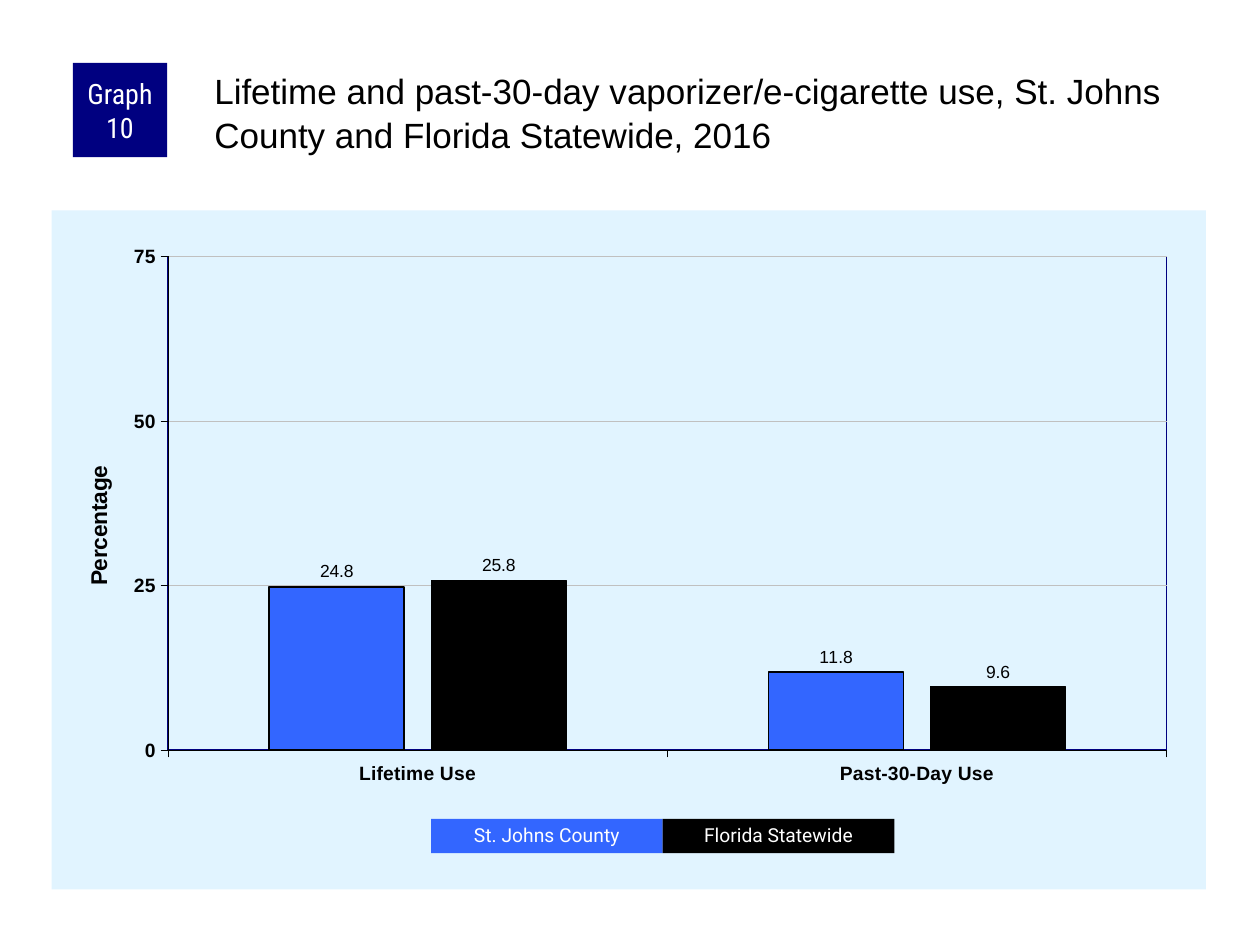
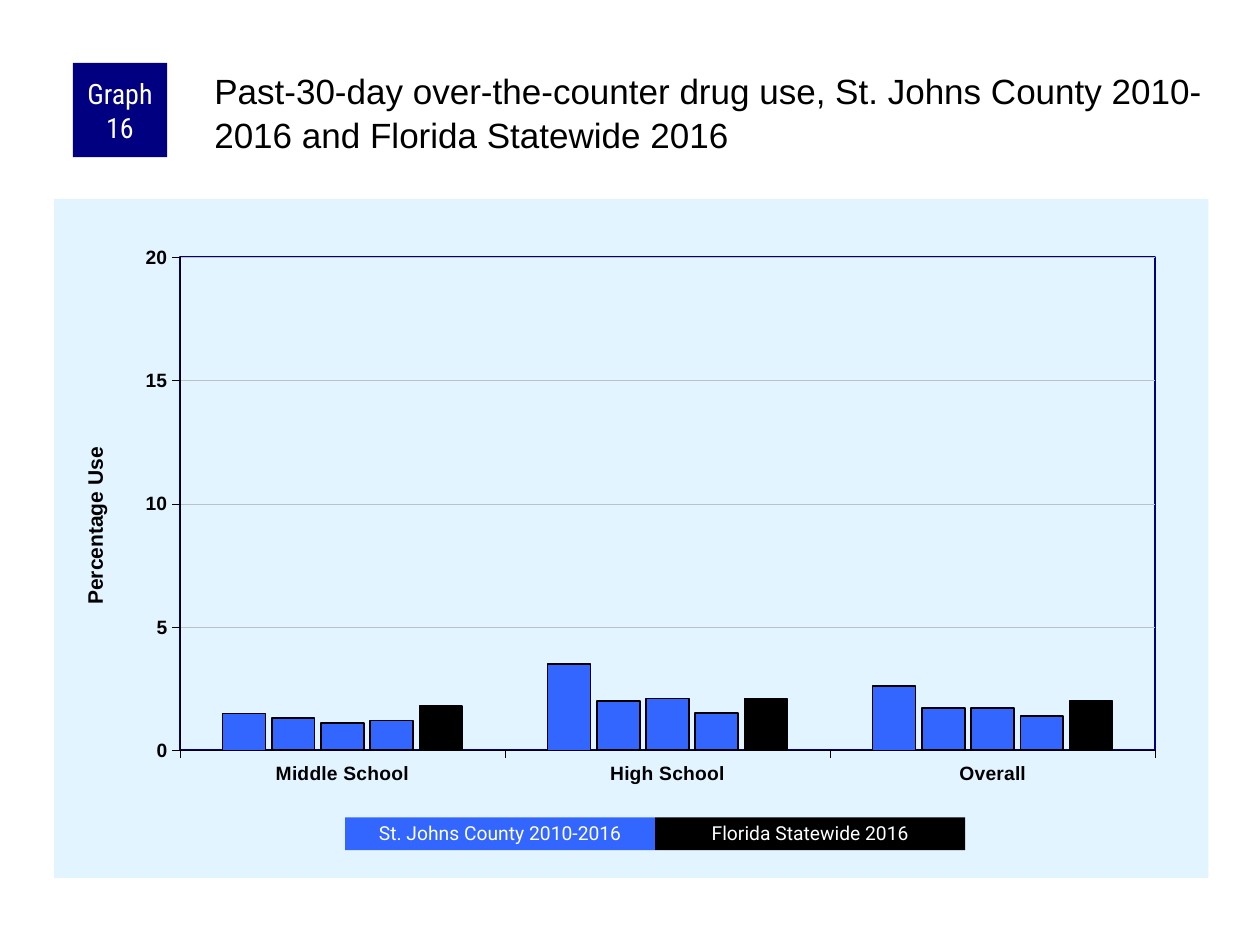
"""Build two survey slides, each with a numbered badge, a title, a column chart and a colour key."""
from lxml import etree
from pptx import Presentation
from pptx import util as u
from pptx.chart.data import CategoryChartData
from pptx.dml.color import RGBColor
from pptx.enum import chart as charts, shapes, text
from pptx.oxml import parse_xml
from pptx.oxml.ns import nsdecls, qn

NAVY, BLUE, BLACK, WHITE = "000080", "3366FF", "000000", "FFFFFF"
PANEL, GRID = "E1F4FF", "C0C0C0"

GRAPHS = [
    dict(
        badge="Graph 10",
        title="Lifetime and past-30-day vaporizer/e-cigarette use, "
              "St. Johns County and Florida Statewide, 2016",
        chart_at=(1.04, 4.24), plot=(0.101, 0.068, 0.865, 0.727),
        axis_title="Percentage", axis_size=13, axis_title_at=(0.025, 0.37),
        maximum=75, step=25, gap=150, overlap=-20, labels=True,
        categories=["Lifetime Use", "Past-30-Day Use"],
        series=[(BLUE, 1, (24.8, 11.8)), (BLACK, 0.75, (25.8, 9.6))],
        key=["St. Johns County", "Florida Statewide"],
        key_at=(8.69, 16.51), key_size=(4.67, 0.69),
    ),
    dict(
        badge="Graph 16",
        title="Past-30-day over-the-counter drug use, "
              "St. Johns County 2010-2016 and Florida Statewide 2016",
        chart_at=(1.09, 4.01), plot=(0.109, 0.086, 0.845, 0.726),
        axis_title="Percentage Use", axis_size=12, axis_title_at=(0.021, 0.36),
        maximum=20, step=5, gap=200, overlap=-15, labels=False,
        categories=["Middle School", "High School", "Overall"],
        series=[(BLUE, 0.75, (1.5, 3.5, 2.6)), (BLUE, 1, (1.3, 2, 1.7)),
                (BLUE, 1, (1.1, 2.1, 1.7)), (BLUE, 1, (1.2, 1.5, 1.4)),
                (BLACK, 1, (1.8, 2.1, 2))],
        key=["St. Johns County 2010-2016", "Florida Statewide 2016"],
        key_at=(6.96, 16.48), key_size=(6.25, 0.66),
    ),
]


def style(item, color, size=None, name=None, bold=None):
    """Colour a fill or a line, or set a whole font."""
    if size is None:
        if hasattr(item, "solid"):
            item.solid()
            item = item.fore_color
        else:
            item = item.color
        item.rgb = RGBColor.from_string(color)
        return
    item.size, item.name, item.bold = u.Pt(size), name, bold
    item.color.rgb = RGBColor.from_string(color)


def place(parent, index, **layout):
    """Give a chart part a fixed layout, in fractions of the chart."""
    for old in parent.findall(qn("c:layout")):
        parent.remove(old)
    element = parse_xml(f'<c:layout {nsdecls("c")}><c:manualLayout/></c:layout>')
    for tag, value in layout.items():
        etree.SubElement(element[0], qn(f"c:{tag}")).set("val", str(value))
    parent.insert(index, element)


deck = Presentation()
deck.slide_width, deck.slide_height = u.Cm(25.4), u.Cm(19.05)

for graph in GRAPHS:
    page = deck.slides.add_slide(deck.slide_layouts[5])

    heading = page.shapes.title
    heading.left, heading.top = u.Cm(4.24), u.Cm(1.27)
    heading.width, heading.height = u.Cm(20.12), u.Cm(2.11)
    frame = heading.text_frame
    frame.word_wrap, frame.auto_size = True, text.MSO_AUTO_SIZE.NONE
    frame.vertical_anchor = text.MSO_ANCHOR.TOP
    frame.margin_left = frame.margin_top = u.Cm(0.08)
    frame.margin_right = frame.margin_bottom = 0
    para = frame.paragraphs[0]
    para.alignment, para.line_spacing = text.PP_ALIGN.LEFT, 1.05
    span = para.add_run()
    span.text = graph["title"]
    style(span.font, BLACK, 20, "Arial")

    data = CategoryChartData()
    data.categories = graph["categories"]
    for number, (_, _, values) in enumerate(graph["series"], 1):
        data.add_series(f"Series {number}", values)
    left, top = graph["chart_at"]
    chart = page.shapes.add_chart(
        charts.XL_CHART_TYPE.COLUMN_CLUSTERED, u.Cm(left), u.Cm(top),
        u.Cm(23.27), u.Cm(13.69), data).chart
    chart.has_legend = chart.has_title = False
    style(chart.font, BLACK, 11, "Arial")

    bars = chart.plots[0]
    bars.gap_width, bars.overlap = graph["gap"], graph["overlap"]
    bars.vary_by_categories = False
    for series, (color, weight, _) in zip(bars.series, graph["series"]):
        style(series.format.fill, color)
        style(series.format.line, BLACK)
        series.format.line.width = u.Pt(weight)
        series.invert_if_negative = False
    if graph["labels"]:
        bars.has_data_labels = True
        labels = bars.data_labels
        labels.show_value = True
        labels.position = charts.XL_LABEL_POSITION.OUTSIDE_END
        labels.number_format, labels.number_format_is_linked = "0.0", False
        style(labels.font, BLACK, 10, "Arial")

    for axis in (chart.category_axis, chart.value_axis):
        axis.major_tick_mark = charts.XL_TICK_MARK.OUTSIDE
        axis.minor_tick_mark = charts.XL_TICK_MARK.NONE
        style(axis.tick_labels.font, BLACK, 11, "Arial", True)
        style(axis.format.line, BLACK)
        axis.format.line.width = u.Pt(0.25)
    scale = chart.value_axis
    scale.minimum_scale, scale.maximum_scale = 0, graph["maximum"]
    scale.major_unit = graph["step"]
    scale.has_major_gridlines = True
    style(scale.major_gridlines.format.line, GRID)
    scale.major_gridlines.format.line.width = u.Pt(0.25)
    scale.has_title = True
    span = scale.axis_title.text_frame.paragraphs[0].add_run()
    span.text = graph["axis_title"]
    style(span.font, BLACK, graph["axis_size"], "Arial", True)
    title = scale.axis_title._element
    for body in title.iter(qn("a:bodyPr")):
        body.set("rot", "-5400000")
        body.set("vert", "horz")
    x, y = graph["axis_title_at"]
    place(title, 1, xMode="edge", yMode="edge", x=x, y=y)

    area = chart.element.find(qn("c:chart"))
    plot = area.find(qn("c:plotArea"))
    x, y, w, h = graph["plot"]
    place(plot, 0, layoutTarget="inner", xMode="edge", yMode="edge", x=x, y=y, w=w, h=h)
    plot.append(parse_xml(
        f'<c:spPr {nsdecls("c", "a")}><a:noFill/><a:ln w="12700"><a:solidFill>'
        f'<a:srgbClr val="{NAVY}"/></a:solidFill></a:ln></c:spPr>'))
    area.addnext(parse_xml(
        f'<c:spPr {nsdecls("c", "a")}><a:solidFill><a:srgbClr val="{PANEL}"/>'
        '</a:solidFill><a:ln><a:noFill/></a:ln></c:spPr>'))

    left, top = graph["key_at"]
    width, height = graph["key_size"]
    boxes = [(graph["badge"], NAVY, 1.47, 1.27, 1.9, 1.9, 16, "Roboto Condensed", 1)]
    for column, (label, color) in enumerate(zip(graph["key"], (BLUE, BLACK))):
        boxes.append((label, color, left + column * width, top, width, height,
                      11, "Roboto", 0.9))
    for label, color, x, y, w, h, size, font, spacing in boxes:
        box = page.shapes.add_shape(
            shapes.MSO_SHAPE.RECTANGLE, u.Cm(x), u.Cm(y), u.Cm(w), u.Cm(h))
        box.shadow.inherit = False
        style(box.fill, color)
        box.line.fill.background()
        frame = box.text_frame
        frame.word_wrap = True
        frame.vertical_anchor = text.MSO_ANCHOR.MIDDLE
        frame.margin_left = frame.margin_right = u.Cm(0.13)
        frame.margin_top = frame.margin_bottom = 0
        para = frame.paragraphs[0]
        para.alignment, para.line_spacing = text.PP_ALIGN.CENTER, spacing
        span = para.add_run()
        span.text = label
        style(span.font, WHITE, size, font)

deck.save("out.pptx")
